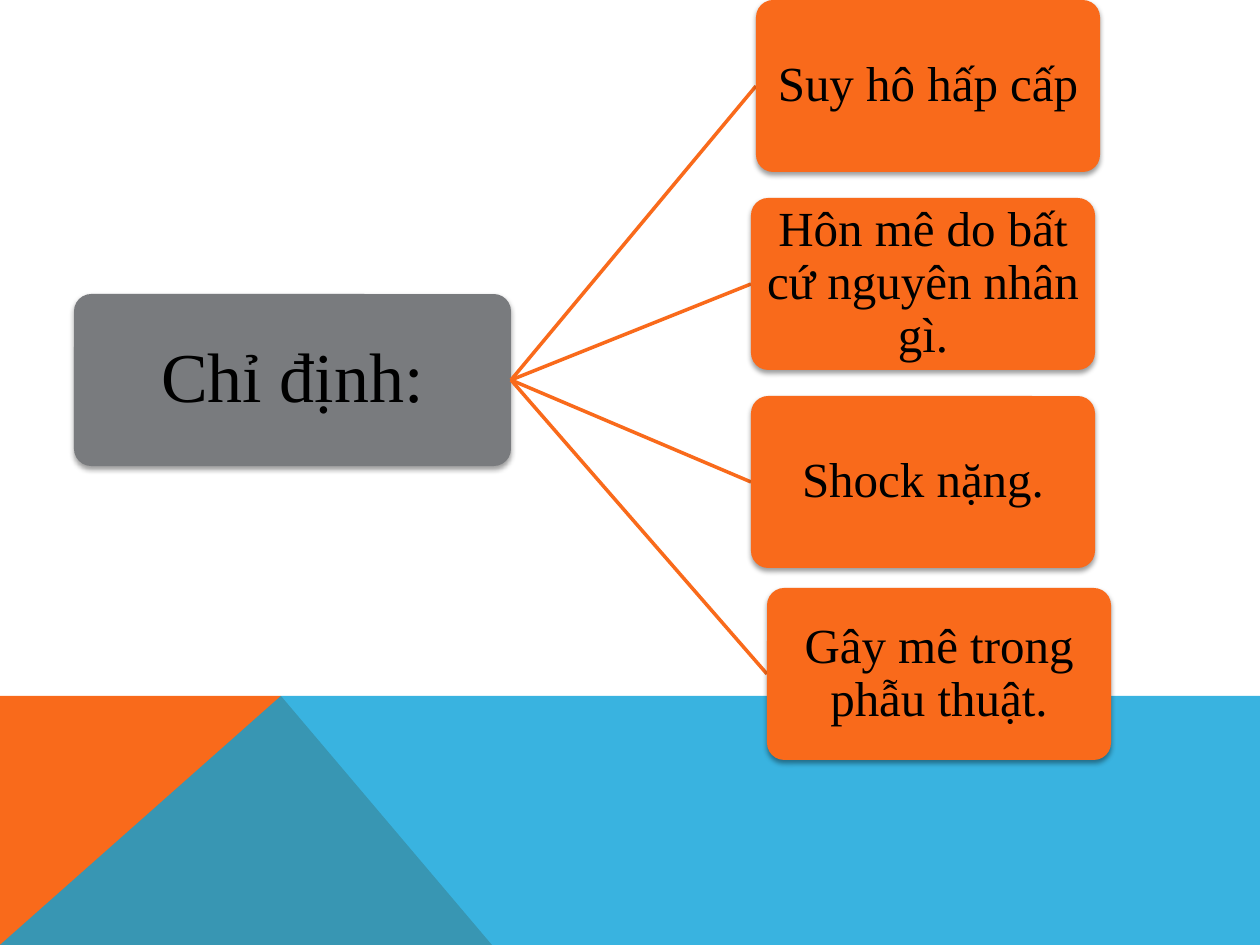
from lxml.etree import SubElement
from pptx import Presentation
from pptx.dml.color import RGBColor
from pptx.enum.shapes import MSO_CONNECTOR, MSO_SHAPE
from pptx.enum.text import MSO_ANCHOR, PP_ALIGN
from pptx.oxml.ns import qn
from pptx.util import Pt

EMU_PER_PX = 914400 / 126
SLIDE_WIDTH, SLIDE_HEIGHT = 1260, 945
BAND_TOP, PEAK_X = 696, 281
BOX_HEIGHT = 172
ORANGE, BLUE, GRAY, BLACK = "F96A1B", "08A1D9", "797B7E", "000000"
ROOT = ("Chỉ định:", 74, 294, 437)
INDICATIONS = [
    ("Suy hô hấp cấp", 756, 0),
    ("Hôn mê do bất cứ nguyên nhân gì.", 751, 198),
    ("Shock nặng.", 751, 396),
    ("Gây mê trong phẫu thuật.", 767, 588),
]


def px(length):
    """Turn a length in px into EMU."""
    return round(length * EMU_PER_PX)


def color(hex_value):
    """Turn a hex string into a colour."""
    return RGBColor.from_string(hex_value)


def apply_format(target, values):
    """Set each attribute of the target from a dict."""
    for name, value in values.items():
        setattr(target, name, value)


def set_alpha(color_element, percent):
    """Give a colour element its opacity."""
    SubElement(color_element, qn("a:alpha"), val=str(percent * 1000))


def fill_shape(shape, hex_value):
    """Fill a shape without outline or shadow."""
    shape.fill.solid()
    shape.fill.fore_color.rgb = color(hex_value)
    shape.line.fill.background()
    shape.shadow.inherit = False


def add_polygon(slide, points, hex_value, opacity=100):
    """Draw a filled polygon through the points."""
    builder = slide.shapes.build_freeform(*points[0], scale=EMU_PER_PX)
    builder.add_line_segments(points[1:], close=True)
    shape = builder.convert_to_shape()
    fill_shape(shape, hex_value)
    if opacity < 100:
        solid_fill = shape.element.spPr.find(qn("a:solidFill"))
        set_alpha(solid_fill[0], opacity)


def add_soft_shadow(shape):
    """Put a faint shadow below a shape."""
    effects = shape.element.spPr.find(qn("a:effectLst"))
    shadow = SubElement(effects, qn("a:outerShdw"), blurRad=str(Pt(3.1)),
                        dist=str(Pt(1.6)), dir="5400000", rotWithShape="0")
    set_alpha(SubElement(shadow, qn("a:srgbClr"), val=BLACK), 38)


def add_box(slide, text, left, top, width, hex_value, size, inset):
    """Draw a rounded box with centred text."""
    shape = slide.shapes.add_shape(MSO_SHAPE.ROUNDED_RECTANGLE, px(left), px(top),
                                   px(width), px(BOX_HEIGHT))
    shape.adjustments[0] = 0.1
    fill_shape(shape, hex_value)
    add_soft_shadow(shape)
    frame = shape.text_frame
    apply_format(frame, {"word_wrap": True, "vertical_anchor": MSO_ANCHOR.MIDDLE})
    sides = ("left", "top", "right", "bottom")
    apply_format(frame, {f"margin_{side}": px(inset) for side in sides})
    paragraph = frame.paragraphs[0]
    apply_format(paragraph, {"alignment": PP_ALIGN.CENTER, "line_spacing": 0.9})
    run = paragraph.add_run()
    run.text = text
    apply_format(run.font, {"name": "Times New Roman", "size": Pt(size)})
    run.font.color.rgb = color(BLACK)


def add_branch(slide, start, end):
    """Draw a line from the root to an indication."""
    branch = slide.shapes.add_connector(MSO_CONNECTOR.STRAIGHT,
                                        *map(px, start), *map(px, end))
    branch.line.color.rgb = color(ORANGE)
    branch.line.width = Pt(2)
    SubElement(branch.element.spPr, qn("a:effectLst"))


def add_band(slide):
    """Draw the coloured band at the bottom."""
    add_polygon(slide, [(0, SLIDE_HEIGHT), (0, BAND_TOP), (PEAK_X, BAND_TOP),
                        (492, SLIDE_HEIGHT)], ORANGE)
    add_polygon(slide, [(0, SLIDE_HEIGHT), (PEAK_X, BAND_TOP), (SLIDE_WIDTH, BAND_TOP),
                        (SLIDE_WIDTH, SLIDE_HEIGHT)], BLUE, opacity=80)


def main():
    """Build the slide and save it."""
    presentation = Presentation()
    apply_format(presentation, {"slide_width": px(SLIDE_WIDTH),
                                "slide_height": px(SLIDE_HEIGHT)})
    slide = presentation.slides.add_slide(presentation.slide_layouts[6])
    add_band(slide)
    text, left, top, width = ROOT
    add_box(slide, text, left, top, width, GRAY, size=40, inset=4)
    root_end = (left + width, top + BOX_HEIGHT / 2)
    for text, left, top in INDICATIONS:
        add_branch(slide, root_end, (left, top + BOX_HEIGHT / 2))
        add_box(slide, text, left, top, 2 * BOX_HEIGHT, ORANGE, size=28, inset=2)
    presentation.save("out.pptx")


if __name__ == "__main__":
    main()
